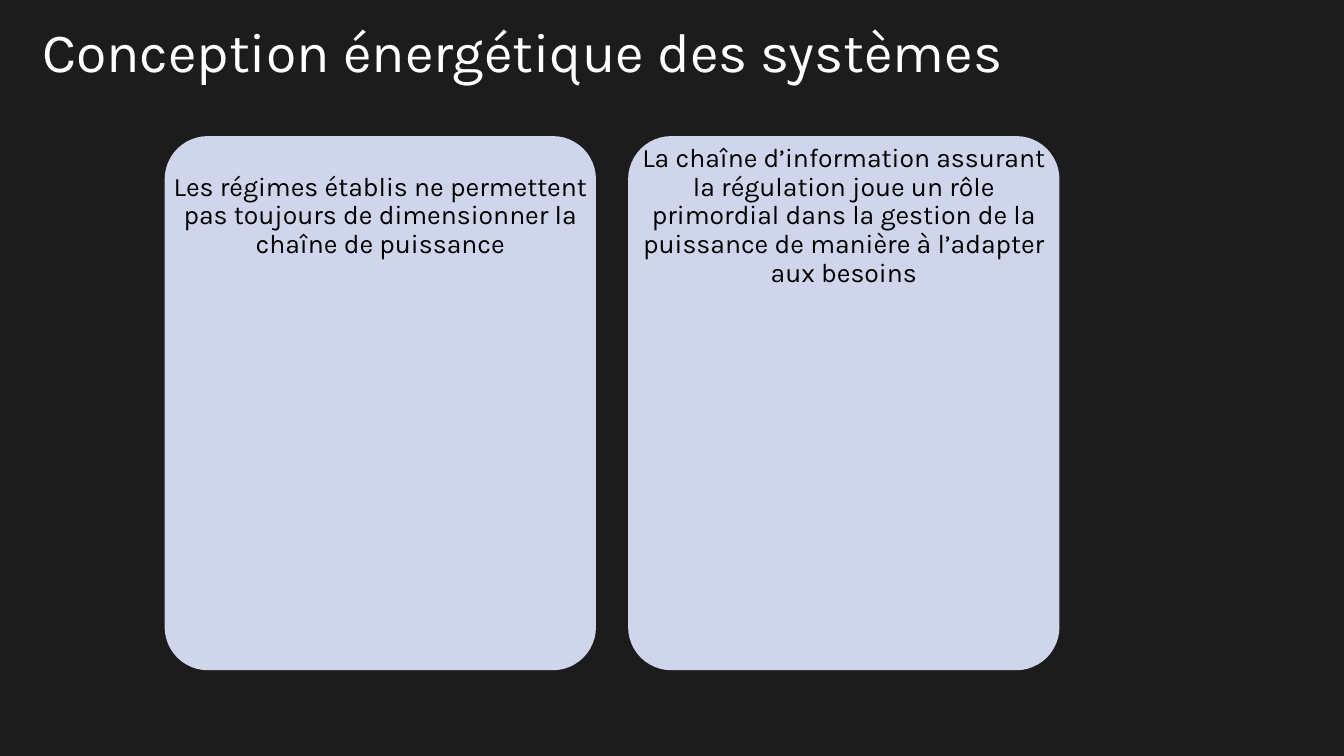
from dataclasses import dataclass

from pptx import Presentation
from pptx.dml.color import RGBColor
from pptx.enum.shapes import MSO_SHAPE
from pptx.enum.text import MSO_ANCHOR, PP_ALIGN
from pptx.util import Cm, Pt

ROUNDED = MSO_SHAPE.ROUNDED_RECTANGLE
BOTTOM, MIDDLE = MSO_ANCHOR.BOTTOM, MSO_ANCHOR.MIDDLE
LEFT, CENTER = PP_ALIGN.LEFT, PP_ALIGN.CENTER


@dataclass(frozen=True)
class Theme:
    font: str = "Karla"
    background: RGBColor = RGBColor(0x1C, 0x1C, 0x1C)
    card: RGBColor = RGBColor(0xCF, 0xD5, 0xEA)
    title: RGBColor = RGBColor(0xFF, 0xFF, 0xFF)
    body: RGBColor = RGBColor(0x00, 0x00, 0x00)
    title_size: float = 39.6
    body_size: float = 19
    line_spacing: float = 0.9


def apply(target, values):
    for name, value in values.items():
        setattr(target, name, value)


class SlideBuilder:
    def __init__(self, slide, theme):
        self.s, self.theme = slide, theme
        fill = slide.background.fill
        fill.solid()
        fill.fore_color.rgb = theme.background

    def text(self, text, box, size, color, frame, align):
        """Add a text box; box is left, top, width, height in centimetres."""
        tf = self.s.shapes.add_textbox(*map(Cm, box)).text_frame
        apply(tf, {"word_wrap": True, **frame})
        p = tf.paragraphs[0]
        apply(p, {"alignment": align, "line_spacing": self.theme.line_spacing})
        r = p.add_run()
        r.text = text
        apply(r.font, {"name": self.theme.font, "size": Pt(size)})
        r.font.color.rgb = color

    def title(self, text):
        self.text(text, (0.81, 0.36, 32.36, 1.9), self.theme.title_size,
                  self.theme.title, {"vertical_anchor": BOTTOM}, LEFT)

    def card(self, text, left, top, width, height):
        """Add a rounded panel with its text centred in the top 30 %."""
        sp = self.s.shapes.add_shape(ROUNDED, *map(Cm, (left, top, width, height)))
        sp.adjustments[0] = 0.1
        sp.shadow.inherit = False
        sp.fill.solid()
        sp.fill.fore_color.rgb = self.theme.card
        sp.line.fill.background()
        margins = {f"margin_{side}": Cm(0.2)
                   for side in ("left", "top", "right", "bottom")}
        self.text(text, (left, top, width, 0.3 * height), self.theme.body_size,
                  self.theme.body, {"vertical_anchor": MIDDLE, **margins}, CENTER)


CARDS = (
    "Les régimes établis ne permettent pas toujours de dimensionner "
    "la chaîne de puissance",
    "La chaîne d’information assurant la régulation joue un rôle primordial "
    "dans la gestion de la puissance de manière à l’adapter aux besoins",
)
CARD_LEFT, CARD_TOP, CARD_WIDTH, CARD_HEIGHT, CARD_GAP = 4.15, 3.43, 10.87, 13.46, 0.81


def main():
    prs = Presentation()
    apply(prs, {"slide_width": Cm(33.87), "slide_height": Cm(19.05)})
    builder = SlideBuilder(prs.slides.add_slide(prs.slide_layouts[6]), Theme())
    builder.title("Conception énergétique des systèmes")
    for i, text in enumerate(CARDS):
        left = CARD_LEFT + i * (CARD_WIDTH + CARD_GAP)
        builder.card(text, left, CARD_TOP, CARD_WIDTH, CARD_HEIGHT)
    prs.save("out.pptx")


if __name__ == "__main__":
    main()
